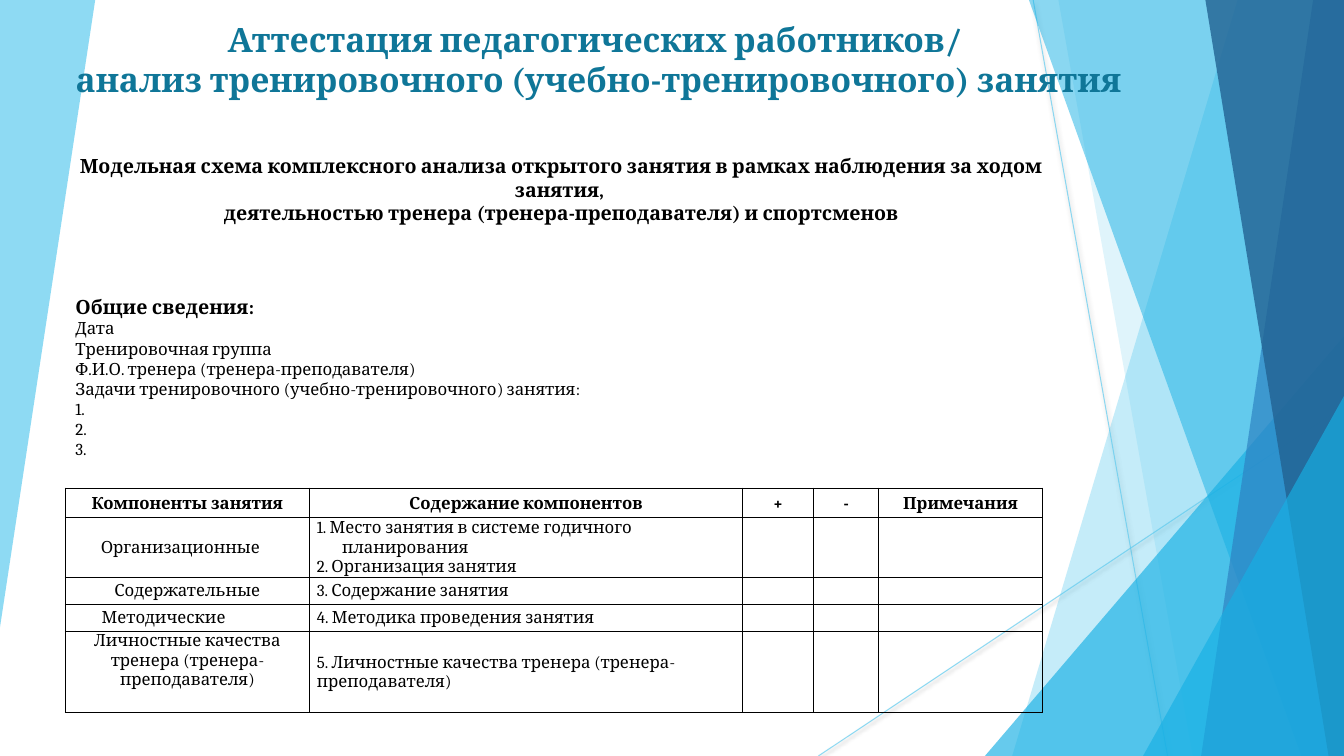
import pptx
import pptx.util
import pptx.dml.color
import pptx.enum.shapes
import pptx.enum.text
import pptx.oxml
import pptx.oxml.ns
from dataclasses import dataclass

Pt = pptx.util.Pt
PP_ALIGN = pptx.enum.text.PP_ALIGN
ANCHOR = pptx.enum.text.MSO_ANCHOR
SHAPE = pptx.enum.shapes.MSO_SHAPE
NS = pptx.oxml.ns.nsdecls("a")


@dataclass(frozen=True)
class Theme:
    font: str = "Cambria"
    title_size: int = 24
    heading_size: int = 14
    text_size: int = 12
    title: str = "0F7698"
    text: str = "000000"
    sky: str = "5FCBEF"
    azure: str = "17B0E4"
    blue: str = "2E83C3"
    navy: str = "226292"


T = Theme()


def rgb(code):
    return pptx.dml.color.RGBColor.from_string(code)


def set_font(p, size, bold=False, color=T.text):
    p.font.name, p.font.size, p.font.bold = T.font, Pt(size), bold
    p.font.color.rgb = rgb(color)


def set_alpha(fill_parent, percent):
    """Make the first solid colour found under the element translucent."""
    color = next(fill_parent.iter(pptx.oxml.ns.qn("a:srgbClr")))
    color.append(pptx.oxml.parse_xml(f'<a:alpha {NS} val="{percent * 1000}"/>'))


def paint(sp, color, alpha):
    sp.fill.solid()
    sp.fill.fore_color.rgb = rgb(color)
    sp.line.fill.background()
    sp.shadow.inherit = False
    set_alpha(sp._element.spPr, alpha)


def add_polygon(s, points, color, alpha):
    (x, y), *rest = [(Pt(px), Pt(py)) for px, py in points]
    builder = s.shapes.build_freeform(x, y, scale=1.0)
    builder.add_line_segments(rest, close=True)
    paint(builder.convert_to_shape(), color, alpha)


def add_ray(s, x1, y1, x2, y2):
    """Thin translucent line with a soft shadow below it."""
    ray = s.shapes.add_connector(pptx.enum.shapes.MSO_CONNECTOR.STRAIGHT,
                                 Pt(x1), Pt(y1), Pt(x2), Pt(y2))
    ray.line.color.rgb = rgb(T.sky)
    ray.line.width = Pt(0.75)
    spPr = ray._element.spPr
    set_alpha(spPr, 70)
    spPr.append(pptx.oxml.parse_xml(
        f'<a:effectLst {NS}><a:outerShdw blurRad="{Pt(3.1)}" dist="{Pt(1.6)}" '
        'dir="5400000" rotWithShape="0"><a:srgbClr val="000000">'
        '<a:alpha val="38000"/></a:srgbClr></a:outerShdw></a:effectLst>'))


def add_corner(s, right, bottom, width, height):
    """Right triangle standing in the lower right corner."""
    sp = s.shapes.add_shape(SHAPE.ISOSCELES_TRIANGLE, Pt(right - width),
                            Pt(bottom - height), Pt(width), Pt(height))
    sp.adjustments[0] = 1
    paint(sp, T.azure, 66)


def add_backdrop(s, width, height):
    def band(top_x, bottom_x, color, alpha):
        add_polygon(s, [(top_x, 0), (width, 0), (width, height), (bottom_x, height)],
                    color, alpha)

    add_polygon(s, [(0, 0), (68, 0), (0, 448)], T.sky, 70)
    add_ray(s, 738, 0, 834, height)
    add_ray(s, width, 290, 584.6, height)
    band(884, 723, T.sky, 36)
    band(756, 852, T.sky, 20)
    add_corner(s, width, height, 256.5, 300)
    band(735, 929.5, T.azure, 50)
    band(938, 858, T.blue, 70)
    band(861, 949, T.navy, 80)
    add_corner(s, width, height, 143.5, 257)


def add_title(s, x, y, w, h):
    sp = s.shapes.title
    s.shapes._spTree.append(sp._element)  # bring in front of the backdrop
    sp.left, sp.top, sp.width, sp.height = Pt(x), Pt(y), Pt(w), Pt(h)
    tf = sp.text_frame
    tf.text = ("Аттестация педагогических работников/ \v"
               "анализ тренировочного (учебно-тренировочного) занятия")
    tf.vertical_anchor = ANCHOR.MIDDLE
    tf.auto_size = pptx.enum.text.MSO_AUTO_SIZE.NONE
    p = tf.paragraphs[0]
    p.alignment = PP_ALIGN.CENTER
    set_font(p, T.title_size, True, T.title)


def add_general_info(s, x, y, w, h):
    headings = [
        "Модельная схема комплексного анализа открытого занятия в рамках "
        "наблюдения за ходом занятия, ",
        "деятельностью тренера (тренера-преподавателя) и спортсменов",
    ]
    section = "Общие сведения:"
    fields = ["Дата", "Тренировочная группа", "Ф.И.О. тренера (тренера-преподавателя)",
              "Задачи тренировочного (учебно-тренировочного) занятия:", "1.", "2.", "3."]
    tf = s.shapes.add_textbox(Pt(x), Pt(y), Pt(w), Pt(h)).text_frame
    tf.word_wrap = True
    tf.text = "\n".join(headings + [section] + fields)
    for p in tf.paragraphs:
        is_field = p.text in fields
        set_font(p, T.text_size if is_field else T.heading_size, not is_field)
        if p.text == section:
            p.space_before = Pt(50)
        elif not is_field:
            p.alignment = PP_ALIGN.CENTER


def format_cell(cell, header, centred):
    cell.fill.background()
    cell.vertical_anchor = ANCHOR.MIDDLE
    cell.margin_left = cell.margin_right = Pt(5.4)
    cell.margin_top = cell.margin_bottom = 0
    for p in cell.text_frame.paragraphs:
        set_font(p, T.text_size, header)
        if centred:
            p.alignment = PP_ALIGN.CENTER
        if header:
            p.line_spacing = 1.15
    tcPr = cell._tc.get_or_add_tcPr()
    for i, side in enumerate(("lnL", "lnR", "lnT", "lnB")):
        tcPr.insert(i, pptx.oxml.parse_xml(
            f'<a:{side} {NS} w="{Pt(1)}"><a:solidFill><a:srgbClr val="{T.text}"/>'
            f'</a:solidFill></a:{side}>'))


def add_components_table(s, x, y):
    widths = [174.2, 309.6, 50.4, 46.8, 116.6]
    heights = [20.7, 42.9, 19.3, 19.3, 57.9]
    rows = [
        ["Компоненты занятия", "Содержание компонентов", "+", "-", "Примечания"],
        ["Организационные", "1. Место занятия в системе годичного планирования\n"
                            "2. Организация занятия"],
        ["Содержательные", "3. Содержание занятия"],
        ["Методические", "4. Методика проведения занятия"],
        ["Личностные качества тренера (тренера-преподавателя)",
         "5. Личностные качества тренера (тренера-преподавателя)"],
    ]
    table = s.shapes.add_table(len(rows), len(widths), Pt(x), Pt(y),
                               Pt(sum(widths)), Pt(sum(heights))).table
    for column, width in zip(table.columns, widths):
        column.width = Pt(width)
    for r, (height, texts) in enumerate(zip(heights, rows)):
        table.rows[r].height = Pt(height)
        for c in range(len(widths)):
            cell = table.cell(r, c)
            cell.text = texts[c] if c < len(texts) else ""
            format_cell(cell, header=r == 0, centred=r == 0 or c == 0)
    for p in table.cell(1, 1).text_frame.paragraphs:
        pPr = p._p.get_or_add_pPr()
        pPr.set("marL", str(Pt(18)))
        pPr.set("indent", str(Pt(-18)))
    table.cell(1, 0).margin_right = Pt(15.4)
    table.cell(3, 0).margin_right = Pt(39.4)
    table.cell(4, 0).vertical_anchor = ANCHOR.TOP


def main():
    prs = pptx.Presentation()
    prs.slide_width, prs.slide_height = Pt(960), Pt(540)
    s = prs.slides.add_slide(prs.slide_layouts[5])
    add_backdrop(s, 960, 540)
    add_title(s, -8, 9.5, 871, 65)
    add_general_info(s, 46.8, 106.5, 708.5, 262)
    add_components_table(s, 46.8, 348.8)
    prs.save("out.pptx")


if __name__ == "__main__":
    main()
